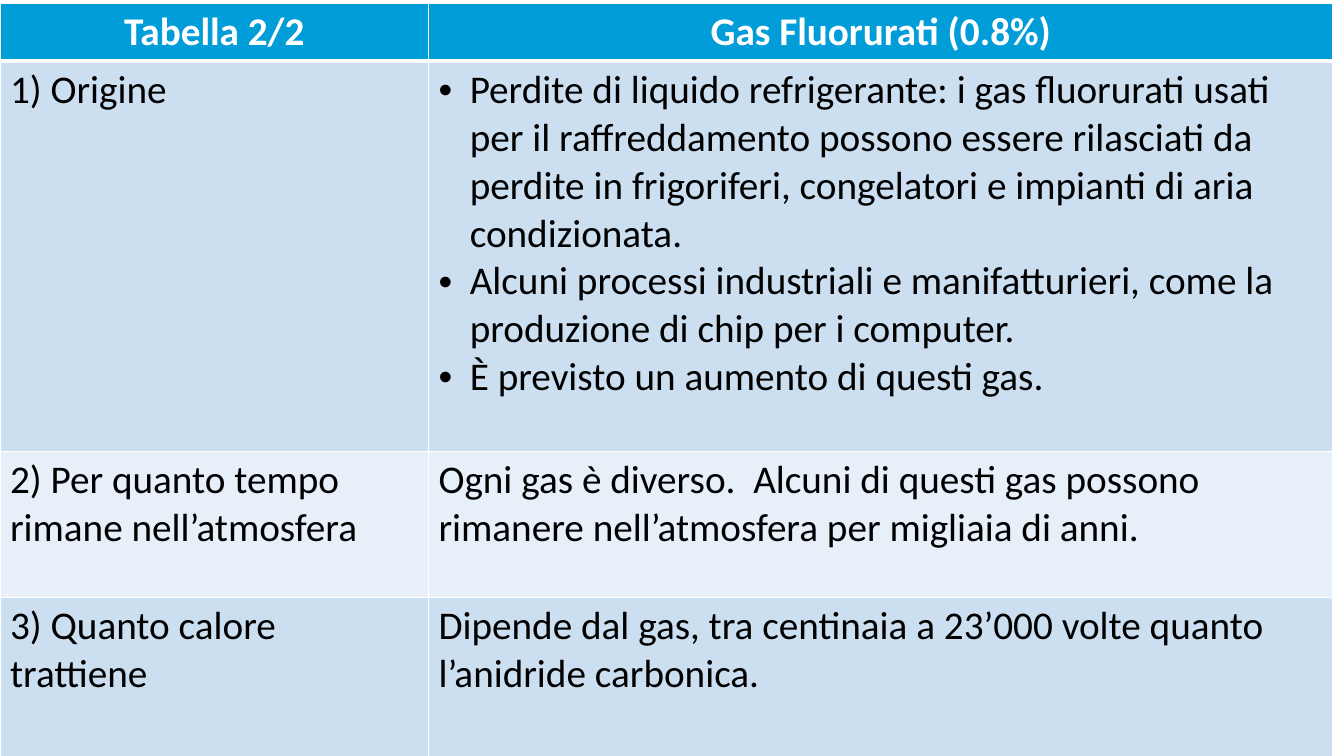
from lxml.etree import SubElement
from pptx import Presentation
from pptx.dml.color import RGBColor
from pptx.enum.text import PP_ALIGN
from pptx.oxml.ns import qn
from pptx.util import Inches, Pt

COLORS = {
    "white": "FFFFFF",
    "black": "000000",
    "header": "009DD9",
    "dark_band": "CCDFF1",
    "light_band": "E7EFF8",
}
COLUMN_WIDTHS = [4.25, 8.97]
ROW_HEIGHTS = [0.57, 3.87, 1.45, 1.66]
GAS_TABLE = [
    [["Tabella 2/2"], ["Gas Fluorurati (0.8%)"]],
    [["1) Origine"], [
        "Perdite di liquido refrigerante: i gas fluorurati usati per il raffreddamento "
        "possono essere rilasciati da perdite in frigoriferi, congelatori e impianti "
        "di aria condizionata.",
        "Alcuni processi industriali e manifatturieri, come la produzione di chip "
        "per i computer.",
        "È previsto un aumento di questi gas.",
    ]],
    [["2) Per quanto tempo rimane nell’atmosfera"], [
        "Ogni gas è diverso.  Alcuni di questi gas possono rimanere nell’atmosfera "
        "per migliaia di anni.",
    ]],
    [["3) Quanto calore trattiene"], [
        "Dipende dal gas, tra centinaia a 23’000 volte quanto l’anidride carbonica.",
    ]],
]


class SlideBuilder:
    """Hold the text style and the current slide, and add elements to it."""

    def __init__(self, page, font="Calibri", size=28):
        self.page = page
        self.font = font
        self.size = size

    def add_span(self, para, text, color, bold):
        """Add one styled run to a paragraph."""
        span = para.add_run()
        span.text = text
        span.font.name = self.font
        span.font.size = Pt(self.size)
        span.font.bold = bold
        span.font.color.rgb = RGBColor.from_string(COLORS[color])

    def add_bullet(self, para, indent=0.31):
        """Give a paragraph a round bullet with a hanging indent."""
        properties = para._p.get_or_add_pPr()
        properties.set("marL", str(Inches(indent)))
        properties.set("indent", str(-Inches(indent)))
        SubElement(properties, qn("a:buFont"), typeface="Arial")
        SubElement(properties, qn("a:buChar"), char="•")

    def add_borders(self, cell, top, bottom):
        """Draw the four white borders of a cell, with widths in points."""
        properties = cell._tc.get_or_add_tcPr()
        widths = {"a:lnL": 1, "a:lnR": 1, "a:lnT": top, "a:lnB": bottom}
        for tag, width in widths.items():
            line = SubElement(properties, qn(tag), w=str(Pt(width)))
            fill = SubElement(line, qn("a:solidFill"))
            SubElement(fill, qn("a:srgbClr"), val=COLORS["white"])

    def fill_cell(self, cell, texts, row):
        """Write and colour one cell according to its row."""
        header = row == 0
        band = "header" if header else "dark_band" if row % 2 else "light_band"
        self.add_borders(cell, top=3 if row == 1 else 1, bottom=3 if header else 1)
        cell.fill.solid()
        cell.fill.fore_color.rgb = RGBColor.from_string(COLORS[band])
        frame = cell.text_frame
        for index, text in enumerate(texts):
            para = frame.add_paragraph() if index else frame.paragraphs[0]
            para.alignment = PP_ALIGN.CENTER if header else PP_ALIGN.LEFT
            if len(texts) > 1:
                self.add_bullet(para)
            self.add_span(para, text, "white" if header else "black", header)

    def add_table(self, left, top, widths, heights, content):
        """Add a banded table with a header row."""
        table = self.page.shapes.add_table(
            len(heights), len(widths), Inches(left), Inches(top),
            Inches(sum(widths)), Inches(sum(heights)),
        ).table
        for column, width in zip(table.columns, widths):
            column.width = Inches(width)
        for row, height in zip(table.rows, heights):
            row.height = Inches(height)
        for row, cells in enumerate(content):
            for column, texts in enumerate(cells):
                self.fill_cell(table.cell(row, column), texts, row)


def main():
    """Build the slide and save the deck."""
    deck = Presentation()
    deck.slide_width = Inches(13.33)
    deck.slide_height = Inches(7.5)
    page = deck.slides.add_slide(deck.slide_layouts[6])
    builder = SlideBuilder(page)
    builder.add_table(0, 0.03, COLUMN_WIDTHS, ROW_HEIGHTS, GAS_TABLE)
    deck.save("out.pptx")


if __name__ == "__main__":
    main()
